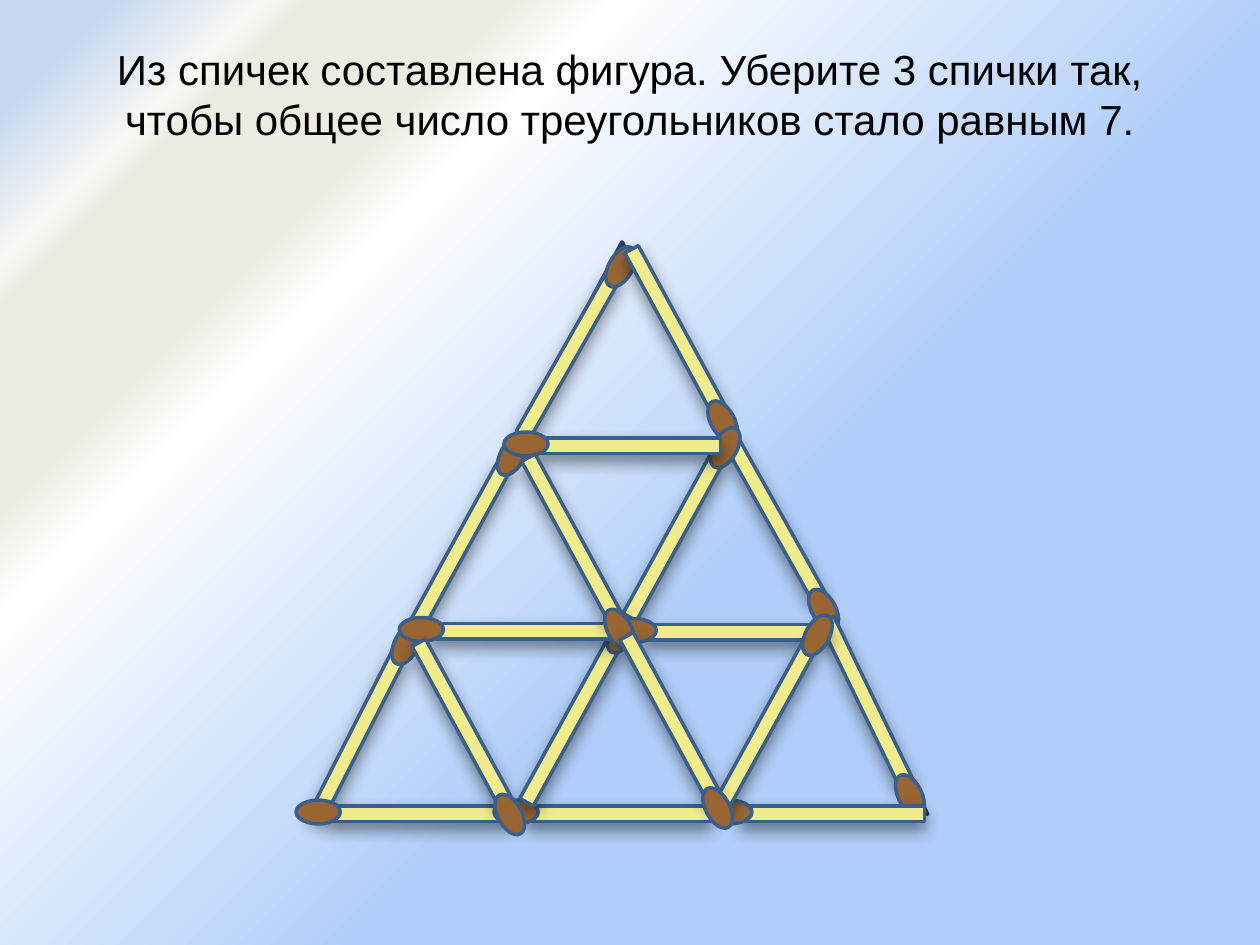
"""Build a slide with a matchstick triangle puzzle."""
from dataclasses import dataclass
from typing import NamedTuple

from pptx import Presentation
from pptx.dml.color import RGBColor
from pptx.enum.shapes import MSO_SHAPE
from pptx.enum.text import MSO_ANCHOR, PP_ALIGN
from pptx.oxml import parse_xml
from pptx.oxml.ns import nsdecls, qn
from pptx.shapes.autoshape import Shape
from pptx.slide import Slide
from pptx.util import Cm, Pt

TRIANGLE = MSO_SHAPE.ISOSCELES_TRIANGLE
STICK = MSO_SHAPE.MATH_MINUS
HEAD = MSO_SHAPE.OVAL
MIDDLE = MSO_ANCHOR.MIDDLE
CENTER = PP_ALIGN.CENTER


class Stop(NamedTuple):
    position: int
    color: str
    opacity: int = 100


@dataclass(frozen=True)
class Theme:
    font: str = "Arial"
    title_size: float = 24
    title_color: str = "000000"
    frame_color: str = "254061"
    frame_width: float = 2.25
    match_line: str = "3A5F8C"
    match_line_width: float = 2
    stick_fill: str = "F1EC8B"
    head_fill: str = "996633"
    shadow_color: str = "000000"
    background: tuple[Stop, ...] = (
        Stop(41, "B0CEF9"),
        Stop(72, "FFFFFF"),
        Stop(77, "EEECE1"),
        Stop(86, "EEECE1"),
        Stop(88, "F8F7F3", 95),
        Stop(95, "C6D9F1"),
    )


class Match(NamedTuple):
    left: float
    top: float
    rotation: float = 0


THEME = Theme()
TITLE = (
    "Из спичек составлена фигура. Уберите 3 спички так, "
    "чтобы общее число треугольников стало равным 7."
)
STICK_WIDTH, STICK_HEIGHT = 5.03, 1.32
HEAD_WIDTH, HEAD_HEIGHT, HEAD_DROP = 0.89, 0.48, 0.38
RISING, FALLING = 118.8, 241.5
BASE_TOP = 15.75
MATCHES = (
    Match(6.78, 10.31, RISING),
    Match(8.94, 6.5, 119.6),
    Match(4.7, 14.15, 117),
    Match(11.1, 5.99, FALLING),
    Match(13.11, 9.8, 240.7),
    Match(14.96, 13.49, 244.1),
    Match(14.27, BASE_TOP),
    Match(5.97, BASE_TOP),
    Match(9.96, BASE_TOP),
    Match(8.99, 13.89, RISING),
    Match(11.07, 10.16, RISING),
    Match(10.16, 8.33),
    Match(8.05, 12.07),
    Match(12.34, 12.09),
    Match(9.02, 10.19, FALLING),
    Match(6.81, 13.92, FALLING),
    Match(12.93, 13.94, RISING),
    Match(11, 13.79, FALLING),
)


def paint_background(slide: Slide, stops: tuple[Stop, ...]) -> None:
    """Fill the background with rings centred on the lower right corner."""
    stop_xml = "".join(
        f'<a:gs pos="{stop.position * 1000}"><a:srgbClr val="{stop.color}">'
        f'<a:alpha val="{stop.opacity * 1000}"/></a:srgbClr></a:gs>'
        for stop in stops
    )
    background = parse_xml(
        f'<p:bg {nsdecls("p", "a")}><p:bgPr><a:gradFill rotWithShape="1">'
        f'<a:gsLst>{stop_xml}</a:gsLst><a:path path="circle">'
        '<a:fillToRect l="100000" t="100000"/></a:path></a:gradFill>'
        "<a:effectLst/></p:bgPr></p:bg>"
    )
    slide.element.find(qn("p:cSld")).insert(0, background)


def set_line(shape: Shape, color: str, width: float) -> None:
    """Set the outline and drop the inherited shadow."""
    shape.line.color.rgb = RGBColor.from_string(color)
    shape.line.width = Pt(width)
    shape.shadow.inherit = False


def style_part(shape: Shape, fill: str) -> None:
    """Give one part of a match its fill and outline."""
    shape.fill.solid()
    shape.fill.fore_color.rgb = RGBColor.from_string(fill)
    set_line(shape, THEME.match_line, THEME.match_line_width)


def cast_shadow(shape: Shape) -> None:
    """Add a soft shadow straight below a shape."""
    shadow = parse_xml(
        f'<a:outerShdw {nsdecls("a")} blurRad="{Pt(9)}" dist="{Pt(4)}" '
        'dir="5400000" rotWithShape="0">'
        f'<a:srgbClr val="{THEME.shadow_color}"><a:alpha val="43000"/>'
        "</a:srgbClr></a:outerShdw>"
    )
    shape.element.spPr.find(qn("a:effectLst")).append(shadow)


def add_title(slide: Slide) -> None:
    """Write the puzzle question."""
    shape = slide.shapes.add_textbox(Cm(1.27), Cm(0.76), Cm(22.86), Cm(3.18))
    text_frame = shape.text_frame
    text_frame.word_wrap = True
    text_frame.vertical_anchor = MIDDLE
    text_frame.margin_bottom = Cm(1.04)
    text_frame.text = TITLE
    paragraph = text_frame.paragraphs[0]
    paragraph.alignment = CENTER
    font = paragraph.runs[0].font
    font.name = THEME.font
    font.size = Pt(THEME.title_size)
    font.color.rgb = RGBColor.from_string(THEME.title_color)


def add_frame(slide: Slide) -> None:
    """Draw the large triangle behind the matches."""
    frame = slide.shapes.add_shape(TRIANGLE, Cm(6.38), Cm(4.88), Cm(12.32), Cm(11.53))
    frame.fill.background()
    set_line(frame, THEME.frame_color, THEME.frame_width)


def add_match(slide: Slide, match: Match) -> None:
    """Draw a stick with its head as one turned group."""
    group = slide.shapes.add_group_shape()
    left, top = Cm(match.left), Cm(match.top)
    stick = group.shapes.add_shape(STICK, left, top, Cm(STICK_WIDTH), Cm(STICK_HEIGHT))
    style_part(stick, THEME.stick_fill)
    cast_shadow(stick)
    head = group.shapes.add_shape(
        HEAD, left, top + Cm(HEAD_DROP), Cm(HEAD_WIDTH), Cm(HEAD_HEIGHT)
    )
    style_part(head, THEME.head_fill)
    group.rotation = match.rotation


def main() -> None:
    """Build and save the presentation."""
    presentation = Presentation()
    presentation.slide_width = Cm(25.4)
    presentation.slide_height = Cm(19.05)
    slide = presentation.slides.add_slide(presentation.slide_layouts[6])
    paint_background(slide, THEME.background)
    add_title(slide)
    add_frame(slide)
    for match in MATCHES:
        add_match(slide, match)
    presentation.save("out.pptx")


if __name__ == "__main__":
    main()
